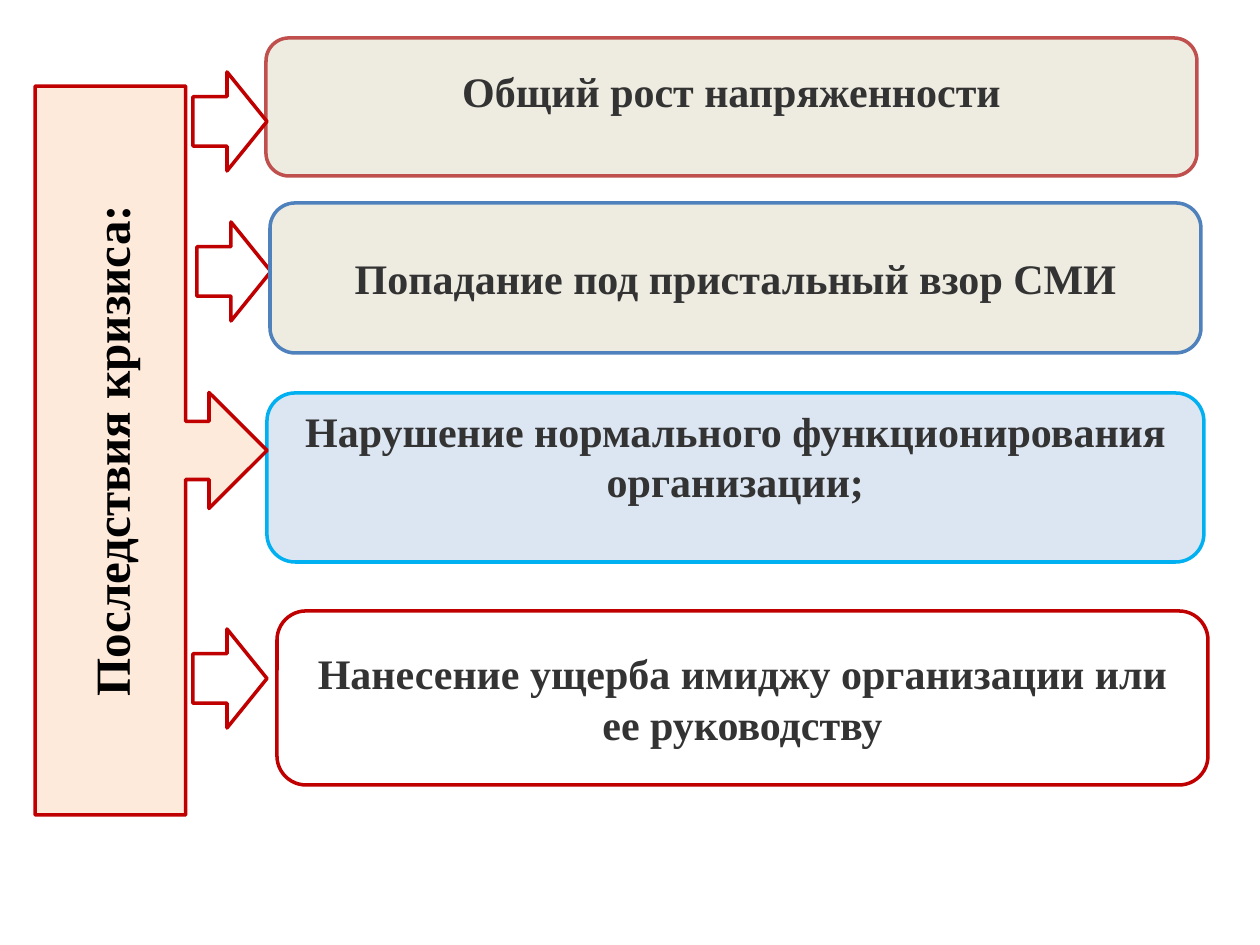
"""Build a slide listing the consequences of a crisis."""
from pptx import Presentation
from pptx.dml.color import RGBColor
from pptx.enum.shapes import MSO_SHAPE as Shape
from pptx.enum.text import MSO_ANCHOR as Anchor, PP_ALIGN as Align
from pptx.util import Pt

PX = 914400 // 126
RED = "C00000"
BODY = {"name": "Times New Roman", "size": Pt(24), "bold": True}
HEADING = {**BODY, "size": Pt(28)}
HEADING_TEXT = "Последствия кризиса:"
HEADING_AREA = (35, 86, 232, 729)
ARROW_SIZE = (74, 99)
ARROW_CORNERS = [(193, 72), (193, 629), (197, 222)]
BOX_WIDTH = 931
FIRST_BOXES = [
    ("Нарушение нормального функционирования организации;",
     (267, 393, 937, 169), "DCE6F2", "00B0F0", 50),
    ("Общий рост напряженности",
     (266, 38, BOX_WIDTH, 138), "EEECE1", "C0504D", 38),
    ("Нанесение ущерба имиджу организации или ее руководству",
     (277, 611, BOX_WIDTH, 174), "FFFFFF", RED, 6),
]
TOP_BOX = ("Попадание под пристальный взор СМИ",
           (270, 203, BOX_WIDTH, 150), "EEECE1", "4F81BD", 6)


def color(value):
    return RGBColor.from_string(value)


def add_outline(page, kind, area, fill, line):
    shape = page.shapes.add_shape(kind, *(length * PX for length in area))
    shape.shadow.inherit = False
    shape.fill.solid()
    shape.fill.fore_color.rgb = color(fill)
    shape.line.color.rgb = color(line)
    shape.line.width = Pt(2)
    return shape


def write(shape, text, font, ink):
    frame = shape.text_frame
    frame.word_wrap = True
    frame.vertical_anchor = Anchor.MIDDLE
    para = frame.paragraphs[0]
    para.alignment = Align.CENTER
    span = para.add_run()
    span.text = text
    for name, value in font.items():
        setattr(span.font, name, value)
    span.font.color.rgb = color(ink)


def add_box(page, text, area, fill, line, bottom):
    box = add_outline(page, Shape.ROUNDED_RECTANGLE, area, fill, line)
    write(box, text, BODY, "333333")
    box.text_frame.margin_bottom = bottom * PX


def main():
    deck = Presentation()
    deck.slide_width, deck.slide_height = 1260 * PX, 945 * PX
    page = deck.slides.add_slide(deck.slide_layouts[6])

    for box in FIRST_BOXES:
        add_box(page, *box)

    callout = add_outline(page, Shape.RIGHT_ARROW_CALLOUT, HEADING_AREA, "FDEADA", RED)
    write(callout, HEADING_TEXT, HEADING, "000000")
    callout.text_frame._txBody.bodyPr.set("vert", "vert270")

    for corner in ARROW_CORNERS:
        arrow = add_outline(page, Shape.RIGHT_ARROW, corner + ARROW_SIZE, "FFFFFF", RED)
        arrow.adjustments[0] = 0.5
        arrow.adjustments[1] = 0.54

    add_box(page, *TOP_BOX)
    deck.save("out.pptx")


if __name__ == "__main__":
    main()
